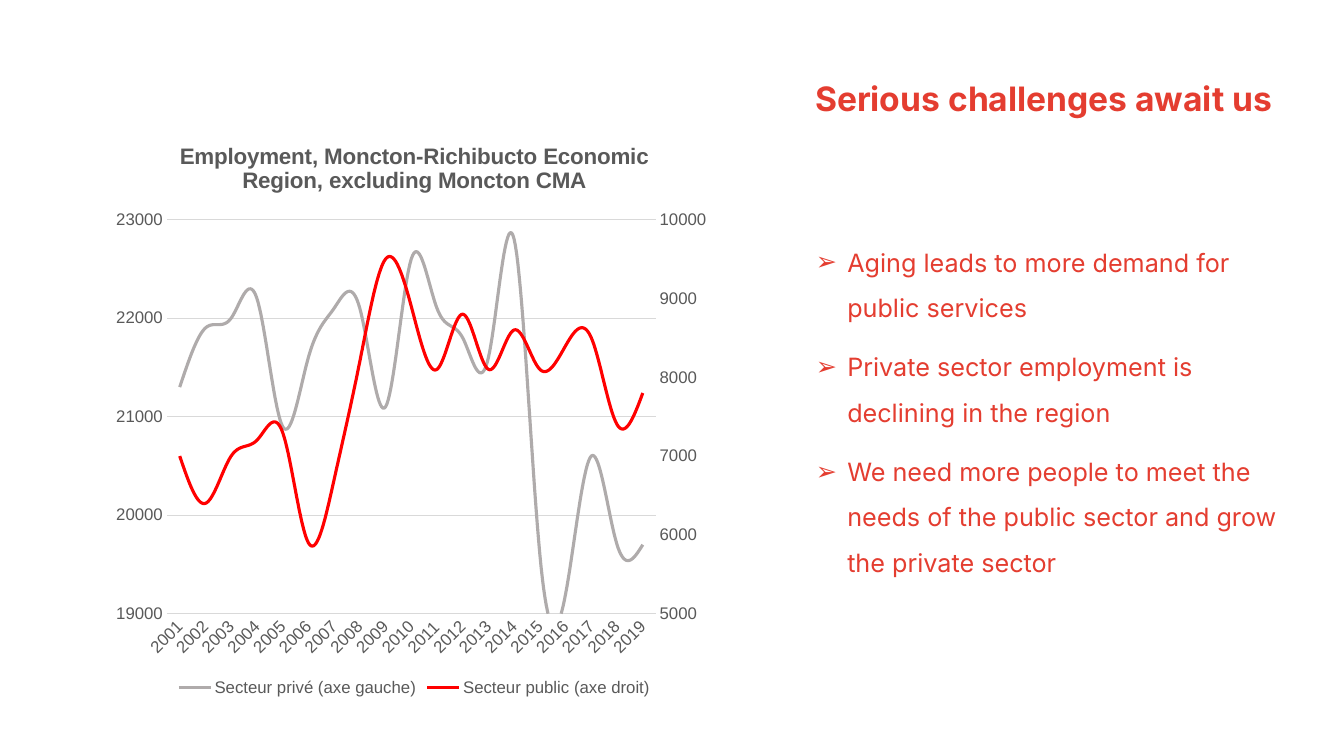
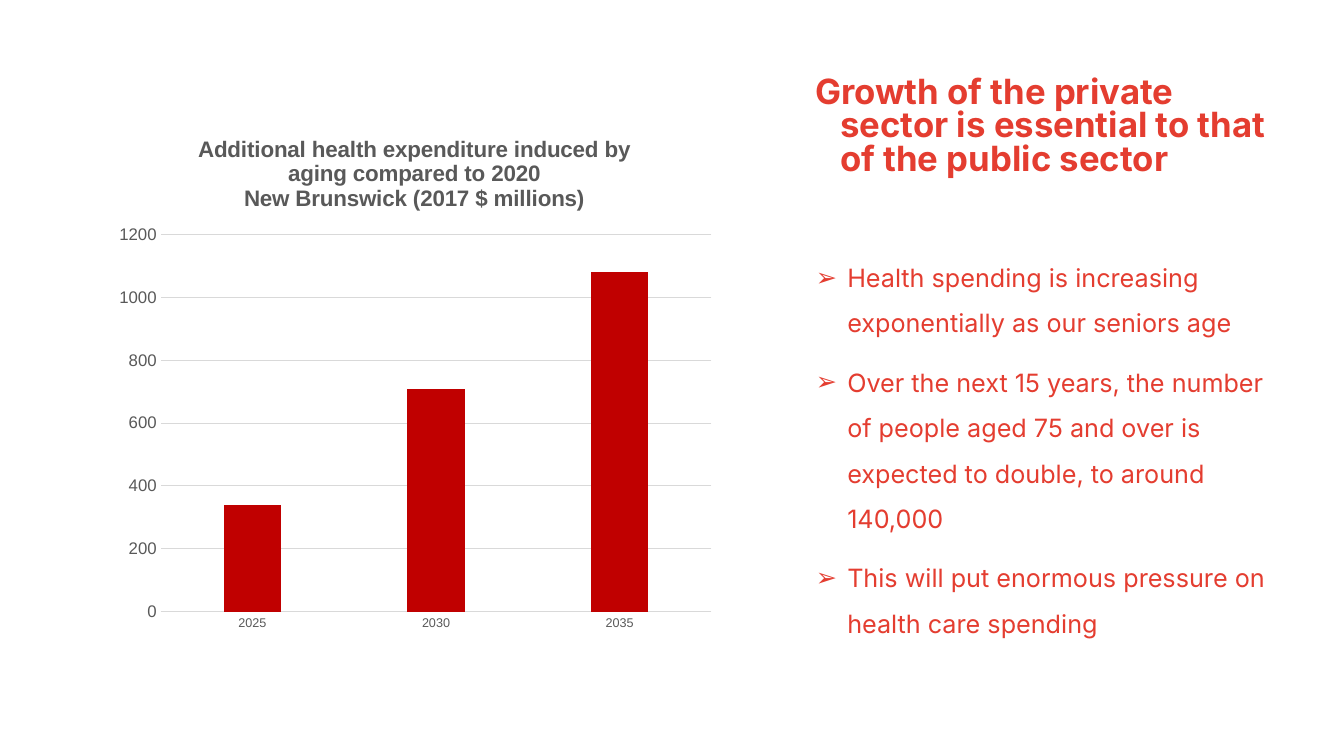
from copy import deepcopy

from lxml import etree
from pptx import Presentation
from pptx.chart.data import CategoryChartData
from pptx.dml.color import RGBColor
from pptx.enum import chart as ch, text
from pptx.oxml import parse_xml
from pptx.oxml.ns import nsdecls, qn
from pptx.util import Pt

# Shared style
RED, GREY, GRID = "E43D30", "595959", "D9D9D9"
TITLE_BOX = (557, 52, 366.5, 93.5)
CHART_LEFT, CHART_WIDTH = 75, 442
LIST_LEFT, LIST_WIDTH = 557.5, 366.5

# Content
SLIDES = [
    dict(
        title="Serious challenges await us", size=24, spacing=1.0,
        points=["Aging leads to more demand for public services",
                "Private sector employment is declining in the region",
                "We need more people to meet the needs of the public sector and grow the private sector"],
        list_top=162, list_height=312,
        kind=ch.XL_CHART_TYPE.LINE, chart_top=86.5, chart_height=414,
        heading=["Employment, Moncton-Richibucto Economic Region, excluding Moncton CMA"],
        cats=[str(year) for year in range(2001, 2020)],
        series=[("Secteur privé (axe gauche)", "AFABAB",
                 [21300, 21900, 22000, 22200, 20900, 21600, 22100, 22100, 21100, 22600,
                  22100, 21800, 21600, 22800, 19600, 19200, 20600, 19700, 19700]),
                ("Secteur public (axe droit)", "FF0000",
                 [7000, 6400, 7000, 7200, 7300, 5900, 6700, 8200, 9500, 8900,
                  8100, 8800, 8100, 8600, 8100, 8400, 8500, 7400, 7800])],
        scale=(19000, 23000, 1000), right_scale=(5000, 10000, 1000),
        cat_size=12, plot=(0.1, 0.17, 0.79, 0.68)),
    dict(
        title="Growth of the private sector is essential to that of the public sector",
        size=24.8, spacing=0.8,
        points=["Health spending is increasing exponentially as our seniors age",
                "Over the next 15 years, the number of people aged 75 and over is expected to double, to around 140,000",
                "This will put enormous pressure on health care spending"],
        list_top=173, list_height=343,
        kind=ch.XL_CHART_TYPE.COLUMN_CLUSTERED, chart_top=83.5, chart_height=374,
        heading=["Additional health expenditure induced by aging compared to 2020",
                 "New Brunswick (2017 $ millions)"],
        cats=["2025", "2030", "2035"],
        series=[("Series 1", "C00000", [340, 710, 1080])],
        scale=(0, 1200, 200), right_scale=None,
        cat_size=9, plot=(0.09, 0.225, 0.89, 0.72)),
]


def color(value):
    return RGBColor.from_string(value)


def set_font(font, **values):
    font.color.rgb = color(values.pop("color"))
    for name, value in values.items():
        setattr(font, name, value)


def place(sp, left, top, width, height):
    for name, value in zip(("left", "top", "width", "height"), (left, top, width, height)):
        setattr(sp, name, Pt(value))


def fill_text(sp, lines, size, spacing, margin, hang, bold=False, bullet=None):
    tf = sp.text_frame
    frame = dict(word_wrap=True, auto_size=text.MSO_AUTO_SIZE.NONE,
                 vertical_anchor=text.MSO_ANCHOR.TOP,
                 margin_left=Pt(7.2), margin_right=Pt(7.2),
                 margin_top=Pt(3.6), margin_bottom=Pt(3.6))
    for name, value in frame.items():
        setattr(tf, name, value)
    for i, line in enumerate(lines):
        p = tf.paragraphs[0] if i == 0 else tf.add_paragraph()
        p.alignment = text.PP_ALIGN.LEFT
        p.line_spacing = spacing
        p.space_before = Pt(10 if i else 0)
        pPr = p._p.get_or_add_pPr()
        pPr.set("marL", str(Pt(margin)))
        pPr.set("indent", str(-Pt(hang)))
        if bullet:
            clr = etree.SubElement(pPr, qn("a:buClr"))
            etree.SubElement(clr, qn("a:srgbClr"), val=RED)
            etree.SubElement(pPr, qn("a:buFont"), typeface="Arial")
            etree.SubElement(pPr, qn("a:buChar"), char=bullet)
        r = p.add_run()
        r.text = line
        set_font(r.font, name="Inter", size=Pt(size), bold=bold, color=RED)


def set_scale(axis, low, high, step):
    axis.minimum_scale, axis.maximum_scale, axis.major_unit = low, high, step


def add_right_axis(chart, low, high, step):
    """Move the last series to a line plot of its own, read on the right."""
    area = chart._chartSpace.chart.plotArea
    left = area.find(qn("c:lineChart"))
    right = deepcopy(left)
    left.remove(left.findall(qn("c:ser"))[-1])
    right.remove(right.findall(qn("c:ser"))[0])
    left.addnext(right)
    cat, val = area.find(qn("c:catAx")), area.find(qn("c:valAx"))
    cat2, val2 = deepcopy(cat), deepcopy(val)
    ids = {cat.find(qn("c:axId")).get("val"): "50010",
           val.find(qn("c:axId")).get("val"): "50020"}
    for part in (right, cat2, val2):
        for tag in ("c:axId", "c:crossAx"):
            for el in part.findall(qn(tag)):
                el.set("val", ids[el.get("val")])
    cat2.find(qn("c:delete")).set("val", "1")
    val2.remove(val2.find(qn("c:majorGridlines")))
    changes = {"c:axPos": "r", "c:crosses": "max", "c:majorTickMark": "none",
               "c:majorUnit": str(step)}
    for tag, value in changes.items():
        val2.find(qn(tag)).set("val", value)
    scaling = val2.find(qn("c:scaling"))
    scaling.find(qn("c:min")).set("val", str(low))
    scaling.find(qn("c:max")).set("val", str(high))
    val.addnext(val2)
    val2.addnext(cat2)


def set_plot_area(chart, x, y, w, h):
    area = chart._chartSpace.chart.plotArea
    for old in area.findall(qn("c:layout")):
        area.remove(old)
    sizes = "".join(f'<c:{k} val="{v}"/>' for k, v in zip("xywh", (x, y, w, h)))
    area.insert(0, parse_xml(
        f'<c:layout {nsdecls("c")}><c:manualLayout><c:layoutTarget val="inner"/>'
        f'<c:xMode val="edge"/><c:yMode val="edge"/>{sizes}</c:manualLayout></c:layout>'))


def add_chart(slide, d):
    data = CategoryChartData(number_format="0")
    data.categories = d["cats"]
    for name, _, values in d["series"]:
        data.add_series(name, values)
    chart = slide.shapes.add_chart(
        d["kind"], Pt(CHART_LEFT), Pt(d["chart_top"]), Pt(CHART_WIDTH),
        Pt(d["chart_height"]), data).chart
    set_font(chart.font, name="Arial", size=Pt(10), color="000000")

    # Heading
    chart.has_title = True
    tf = chart.chart_title.text_frame
    for i, line in enumerate(d["heading"]):
        p = tf.paragraphs[0] if i == 0 else tf.add_paragraph()
        r = p.add_run()
        r.text = line
        set_font(r.font, name="Arial", size=Pt(16), bold=True, color=GREY)
    chart.chart_title.include_in_layout = False

    # Axes
    cat, val = chart.category_axis, chart.value_axis
    for axis, size in ((cat, d["cat_size"]), (val, 12)):
        axis.major_tick_mark = axis.minor_tick_mark = ch.XL_TICK_MARK.NONE
        set_font(axis.tick_labels.font, name="Arial", size=Pt(size), color=GREY)
    val.has_major_gridlines = True
    for line in (cat.format.line, val.major_gridlines.format.line):
        line.color.rgb = color(GRID)
        line.width = Pt(0.75)
    val.format.line.fill.background()
    val.tick_labels.number_format = "0"
    val.tick_labels.number_format_is_linked = False
    set_scale(val, *d["scale"])

    # Series
    plot = chart.plots[0]
    plot.vary_by_categories = False
    is_line = d["kind"] == ch.XL_CHART_TYPE.LINE
    for series, (_, hue, _) in zip(plot.series, d["series"]):
        if is_line:
            series.smooth = True
            series.marker.style = ch.XL_MARKER_STYLE.NONE
            series.format.line.color.rgb = color(hue)
            series.format.line.width = Pt(2.25)
        else:
            series.format.fill.solid()
            series.format.fill.fore_color.rgb = color(hue)
    if not is_line:
        plot.gap_width, plot.overlap = 219, -27

    # Legend and layout
    chart.has_legend = is_line
    if is_line:
        chart.legend.position = ch.XL_LEGEND_POSITION.BOTTOM
        chart.legend.include_in_layout = False
        set_font(chart.legend.font, name="Arial", size=Pt(12), color=GREY)
    if d["right_scale"]:
        add_right_axis(chart, *d["right_scale"])
    set_plot_area(chart, *d["plot"])


def main():
    prs = Presentation()
    prs.slide_width, prs.slide_height = Pt(960), Pt(540)
    for d in SLIDES:
        slide = prs.slides.add_slide(prs.slide_layouts[1])
        title, body = slide.placeholders
        place(title, *TITLE_BOX)
        fill_text(title, [d["title"]], d["size"], d["spacing"], 36, 18, bold=True)
        place(body, LIST_LEFT, d["list_top"], LIST_WIDTH, d["list_height"])
        fill_text(body, d["points"], 18, 1.5, 40.5, 22.5, bullet="➢")
        add_chart(slide, d)
    prs.save("out.pptx")


if __name__ == "__main__":
    main()
